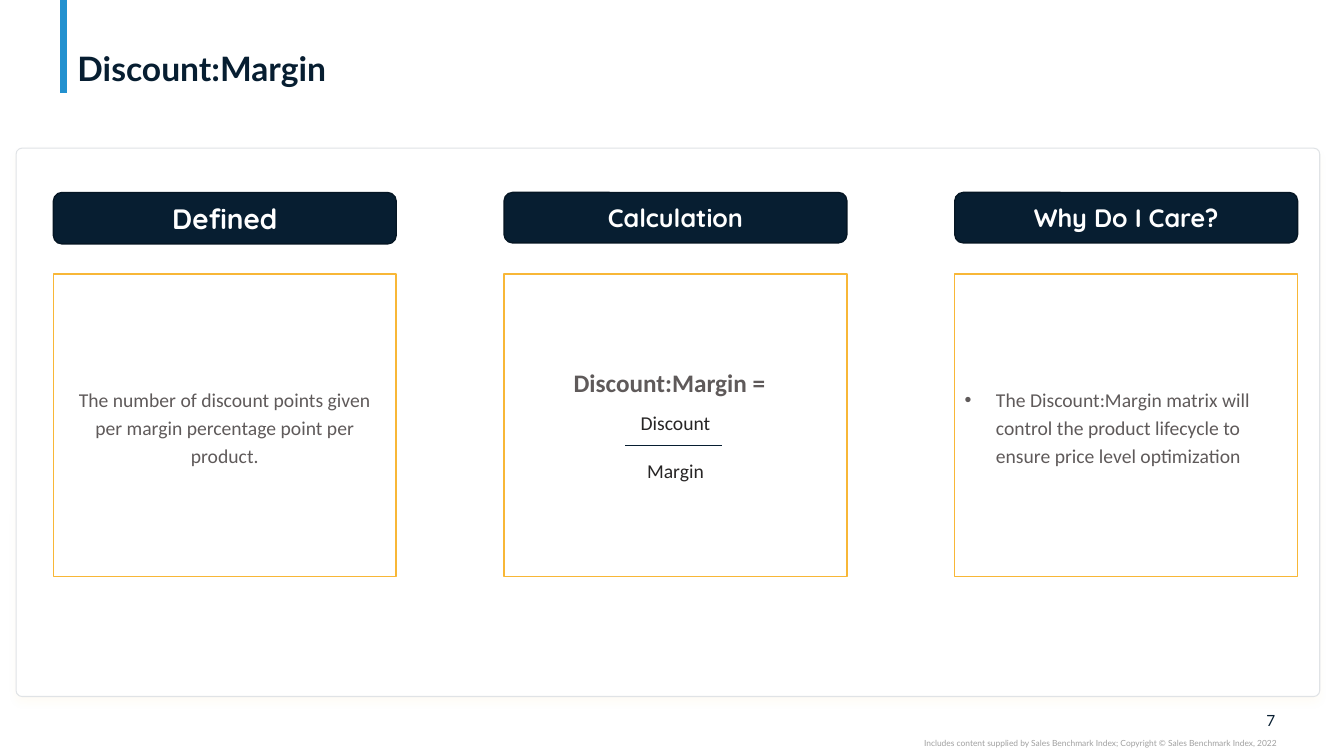
"""Build the Discount:Margin slide with its three explanation cards."""
from dataclasses import dataclass

from lxml.etree import SubElement
from pptx import Presentation
from pptx.dml.color import RGBColor
from pptx.enum.shapes import MSO_CONNECTOR as Connector, MSO_SHAPE as Shape
from pptx.enum.text import MSO_ANCHOR as Anchor, PP_ALIGN as Align
from pptx.oxml.ns import qn
from pptx.util import Inches, Pt

COLORS = {
    "navy": "071E31", "navy_edge": "051624", "blue": "2391CF", "amber": "F8B737",
    "white": "FFFFFF", "frame": "E0E3E6", "body": "5F5A5A", "ink": "272525",
    "footer": "A0A0A0",
}
CARD_LEFT, CARD_STEP, CARD_WIDTH = 0.53, 4.47, 3.4
HEADER_TOP, BODY_TOP, BODY_HEIGHT = 1.91, 2.72, 3.0
DEFAULT_INSETS = (0.1, 0.05, 0.1, 0.05)


@dataclass
class Card:
    heading: str
    body: str
    heading_size: float = 18
    heading_height: float = 0.5
    body_size: float = 14
    bold: bool = False
    bullet: bool = False
    spacing: float = 1.2
    insets: tuple = DEFAULT_INSETS


CARDS = [
    Card("Defined", "The number of discount points given per margin percentage point per product.",
         heading_size=20, heading_height=0.51),
    Card("Calculation", "Discount:Margin =", body_size=18, bold=True, spacing=1.0,
         insets=(0.1, 0.05, 0.22, 0.91)),
    Card("Why Do I Care?", "The Discount:Margin matrix will control the product lifecycle "
         "to ensure price level optimization", bullet=True),
]


def color(name: str) -> RGBColor:
    return RGBColor.from_string(COLORS[name])


def add_bullet(paragraph, indent: float) -> None:
    properties = paragraph._p.get_or_add_pPr()
    properties.set("marL", str(Inches(indent)))
    properties.set("indent", str(-Inches(indent)))
    SubElement(properties, qn("a:buFont"), typeface="Arial")
    SubElement(properties, qn("a:buChar"), char="•")


def write_text(shape, text: str, *, size: float, ink: str, font: str = "Calibri",
               bold: bool = False, align=Align.CENTER, anchor=Anchor.MIDDLE,
               insets: tuple = DEFAULT_INSETS, spacing: float = 1.0,
               gap: float = 0, bullet: bool = False) -> None:
    frame = shape.text_frame
    frame.word_wrap = True
    frame.vertical_anchor = anchor
    frame.margin_left, frame.margin_top, frame.margin_right, frame.margin_bottom = map(Inches, insets)
    frame.text = text
    for index, paragraph in enumerate(frame.paragraphs):
        paragraph.alignment = align
        paragraph.line_spacing = spacing
        if index:
            paragraph.space_before = Pt(gap)
        if bullet:
            add_bullet(paragraph, 0.31)
        paragraph.font.name = font
        paragraph.font.size = Pt(size)
        paragraph.font.bold = bold
        paragraph.font.color.rgb = color(ink)


def add_text(slide, box: tuple, text: str, **text_format) -> None:
    write_text(slide.shapes.add_textbox(*map(Inches, box)), text, **text_format)


def add_box(slide, kind, box: tuple, fill: str, edge: str, width: float = 1):
    shape = slide.shapes.add_shape(kind, *map(Inches, box))
    shape.shadow.inherit = False
    shape.fill.solid()
    shape.fill.fore_color.rgb = color(fill)
    shape.line.color.rgb = color(edge)
    shape.line.width = Pt(width)
    return shape


def add_line(slide, start: tuple, end: tuple, ink: str, width: float) -> None:
    line = slide.shapes.add_connector(Connector.STRAIGHT, *map(Inches, start + end))
    line.line.color.rgb = color(ink)
    line.line.width = Pt(width)
    SubElement(line._element.spPr, qn("a:effectLst"))


def add_panel(slide) -> None:
    panel = add_box(slide, Shape.ROUNDED_RECTANGLE, (0.16, 1.47, 12.93, 5.44), "white", "frame", 0.75)
    panel.adjustments[0] = 0.011
    effects = panel._element.spPr.find(qn("a:effectLst"))
    shadow = SubElement(effects, qn("a:outerShdw"), blurRad=str(Pt(6)), dist=str(Pt(4)),
                        dir="5400000", algn="t", rotWithShape="0")
    tint = SubElement(shadow, qn("a:srgbClr"), val=COLORS["amber"])
    SubElement(tint, qn("a:alpha"), val="4000")


def add_card(slide, card: Card, left: float) -> None:
    header = add_box(slide, Shape.ROUNDED_RECTANGLE,
                     (left, HEADER_TOP, CARD_WIDTH, card.heading_height), "navy", "navy_edge")
    write_text(header, card.heading, size=card.heading_size, ink="white", font="Quicksand", bold=True)
    body = add_box(slide, Shape.RECTANGLE, (left, BODY_TOP, CARD_WIDTH, BODY_HEIGHT), "white", "amber")
    write_text(body, card.body, size=card.body_size, ink="body", bold=card.bold,
               align=Align.LEFT if card.bullet else Align.CENTER,
               insets=card.insets, spacing=card.spacing, bullet=card.bullet)


def main() -> None:
    presentation = Presentation()
    presentation.slide_width, presentation.slide_height = Inches(13.33), Inches(7.5)
    slide = presentation.slides.add_slide(presentation.slide_layouts[6])

    add_line(slide, (0.63, 0), (0.63, 0.92), "blue", 5)
    add_text(slide, (12.32, 7.05, 0.33, 0.19), "7", size=11, ink="navy", font="Lato",
             align=Align.RIGHT, insets=(0, 0, 0, 0))
    add_text(slide, (7.5, 7.32, 5.16, 0.1),
             "Includes content supplied by Sales Benchmark Index; Copyright © Sales Benchmark Index, 2022",
             size=6, ink="footer", font="Lato", align=Align.RIGHT, anchor=Anchor.TOP, insets=(0, 0, 0, 0))
    add_text(slide, (0.67, 0.04, 11.99, 0.84), "Discount:Margin", size=24, ink="navy", font="Lato",
             bold=True, align=Align.LEFT, anchor=Anchor.BOTTOM, insets=(0.1, 0, 0.1, 0), spacing=0.9)

    add_panel(slide)
    for index, card in enumerate(CARDS):
        add_card(slide, card, CARD_LEFT + index * CARD_STEP)

    add_line(slide, (6.2, 4.42), (7.16, 4.42), "navy", 0.25)
    add_text(slide, (5.65, 4.03, 2.1, 0.81), "Discount\nMargin", size=14, ink="ink",
             anchor=Anchor.TOP, gap=17)

    presentation.save("out.pptx")


if __name__ == "__main__":
    main()
